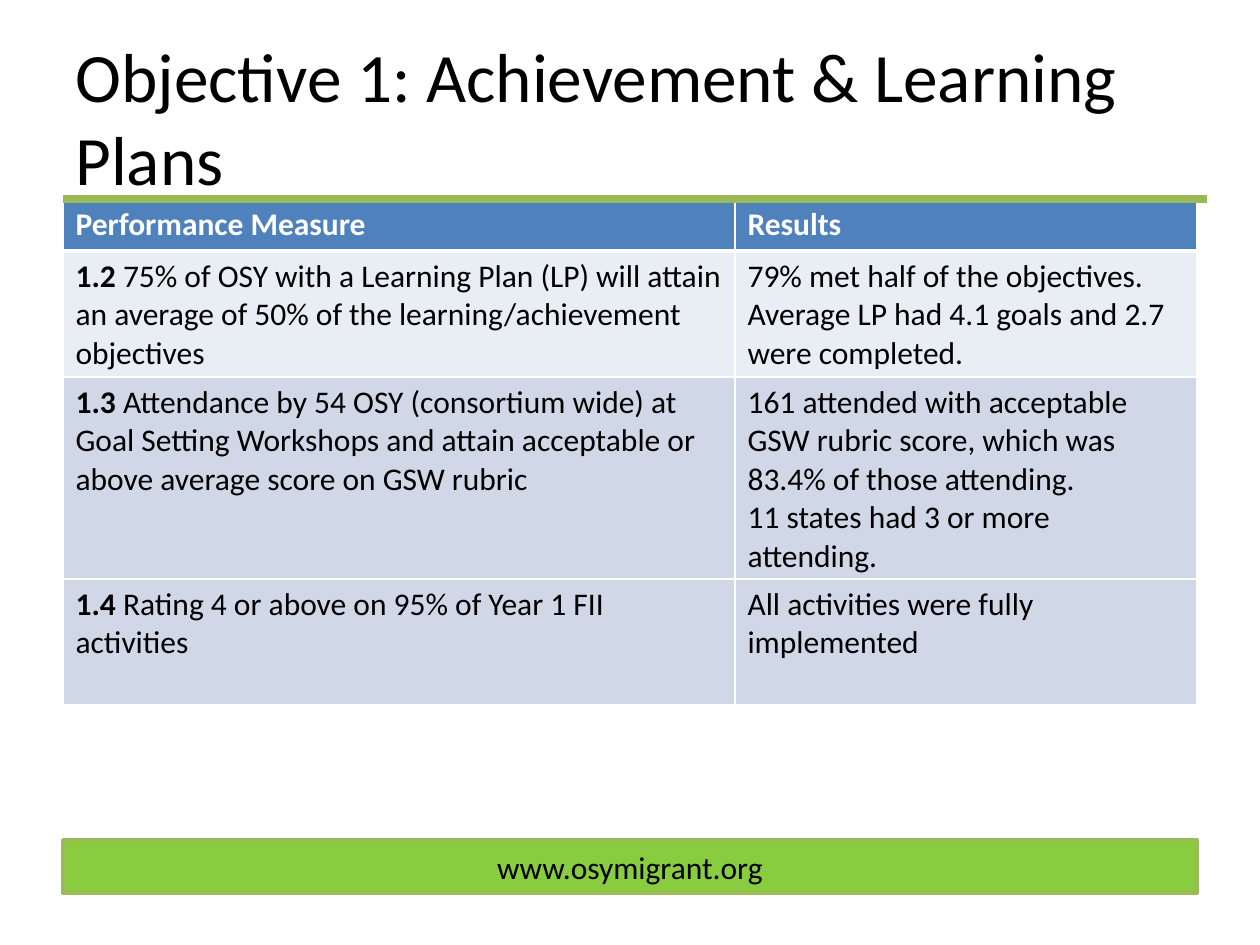
from pptx import Presentation
from pptx.dml.color import RGBColor
from pptx.enum.shapes import MSO_CONNECTOR, MSO_SHAPE
from pptx.enum.text import MSO_ANCHOR, PP_ALIGN
from pptx.oxml import parse_xml
from pptx.oxml.ns import nsdecls
from pptx.util import Pt
from lxml.etree import SubElement
from pptx.oxml.ns import qn

SCALE = 914400 / 126
FONT = "Calibri"
COLORS = {
    "text": "000000", "white": "FFFFFF", "head": "4F81BD",
    "light": "E9EDF4", "band": "D0D8E8", "rule": "98B955",
    "bar": "89CC40", "edge": "9BBB59",
}
LEFT, WIDTH = 63, 1134
COLS = [672, 462]

# Each row: height, fill, cells; a cell is a list of paragraphs of (text, bold) runs
ROWS = [
    (52, "head", [[[("Performance Measure", True)]], [[("Results", True)]]]),
    (126, "light", [
        [[("1.2", True),
          (" 75% of OSY with a Learning Plan (LP) will attain an average of 50% "
           "of the learning/achievement objectives", False)]],
        [[("79% met half of the objectives.", False)],
         [("Average LP had 4.1 goals and 2.7 were completed.", False)]],
    ]),
    (202, "band", [
        [[("1.3", True),
          (" Attendance by 54 OSY (consortium wide) at Goal Setting Workshops and "
           "attain acceptable or above average score on GSW rubric", False)]],
        [[("161 attended with acceptable GSW rubric score, which was 83.4% of "
           "those attending.", False)],
         [("11 states had 3 or more attending.", False)]],
    ]),
    (126, "band", [
        [[("1.4 ", True),
          ("Rating 4 or above on 95% of Year 1 FII activities", False)]],
        [[("All activities were fully implemented", False)]],
    ]),
]


def px(n):
    return round(n * SCALE)


def rgb(name):
    return RGBColor.from_string(COLORS[name])


def add_run(para, text, size, color="text", bold=False):
    run = para.add_run()
    run.text = text
    font = run.font
    font.name, font.size, font.bold = FONT, Pt(size), bold
    font.color.rgb = rgb(color)


def add_title(slide, text):
    box = slide.shapes.add_textbox(px(LEFT), px(38), px(WIDTH), px(157))
    frame = box.text_frame
    frame.word_wrap = True
    frame.vertical_anchor = MSO_ANCHOR.MIDDLE
    add_run(frame.paragraphs[0], text, 39.6)


def set_edges(cell, top, bottom):
    props = cell._tc.get_or_add_tcPr()
    widths = {"lnL": 1, "lnR": 1, "lnT": top, "lnB": bottom}
    for i, (tag, width) in enumerate(widths.items()):
        props.insert(i, parse_xml(
            f'<a:{tag} {nsdecls("a")} w="{Pt(width)}"><a:solidFill>'
            f'<a:srgbClr val="{COLORS["white"]}"/></a:solidFill></a:{tag}>'))


def fill_cell(cell, paras, fill, row):
    cell.fill.solid()
    cell.fill.fore_color.rgb = rgb(fill)
    set_edges(cell, 3 if row == 1 else 1, 3 if row == 0 else 1)
    frame = cell.text_frame
    for i, runs in enumerate(paras):
        para = frame.add_paragraph() if i else frame.paragraphs[0]
        for text, bold in runs:
            add_run(para, text, 18, "text" if row else "white", bold)


def add_grid(slide, top):
    high = sum(row[0] for row in ROWS)
    table = slide.shapes.add_table(
        len(ROWS), len(COLS), px(LEFT), px(top), px(WIDTH), px(high)).table
    for col, width in zip(table.columns, COLS):
        col.width = px(width)
    for r, (height, fill, cells) in enumerate(ROWS):
        table.rows[r].height = px(height)
        for c, paras in enumerate(cells):
            fill_cell(table.cell(r, c), paras, fill, r)


def add_rule(slide, y, end):
    line = slide.shapes.add_connector(
        MSO_CONNECTOR.STRAIGHT, px(LEFT), px(y), px(end), px(y))
    line.line.color.rgb = rgb("rule")
    line.line.width = Pt(4.5)
    SubElement(line._element.spPr, qn("a:effectLst"))


def add_bar(slide, text):
    bar = slide.shapes.add_shape(
        MSO_SHAPE.RECTANGLE, px(LEFT), px(840), px(WIDTH), px(53))
    bar.shadow.inherit = False
    bar.fill.solid()
    bar.fill.fore_color.rgb = rgb("bar")
    bar.line.color.rgb = rgb("edge")
    bar.line.width = Pt(2)
    frame = bar.text_frame
    frame.vertical_anchor = MSO_ANCHOR.MIDDLE
    para = frame.paragraphs[0]
    para.alignment = PP_ALIGN.CENTER
    add_run(para, text, 18)


def main():
    deck = Presentation()
    deck.slide_width, deck.slide_height = px(1260), px(945)
    slide = deck.slides.add_slide(deck.slide_layouts[6])

    # Heading, results table, rule under the heading, web address
    add_title(slide, "Objective 1: Achievement & Learning Plans")
    add_grid(slide, 199)
    add_rule(slide, 199, 1207)
    add_bar(slide, "www.osymigrant.org")

    deck.save("out.pptx")


if __name__ == "__main__":
    main()
